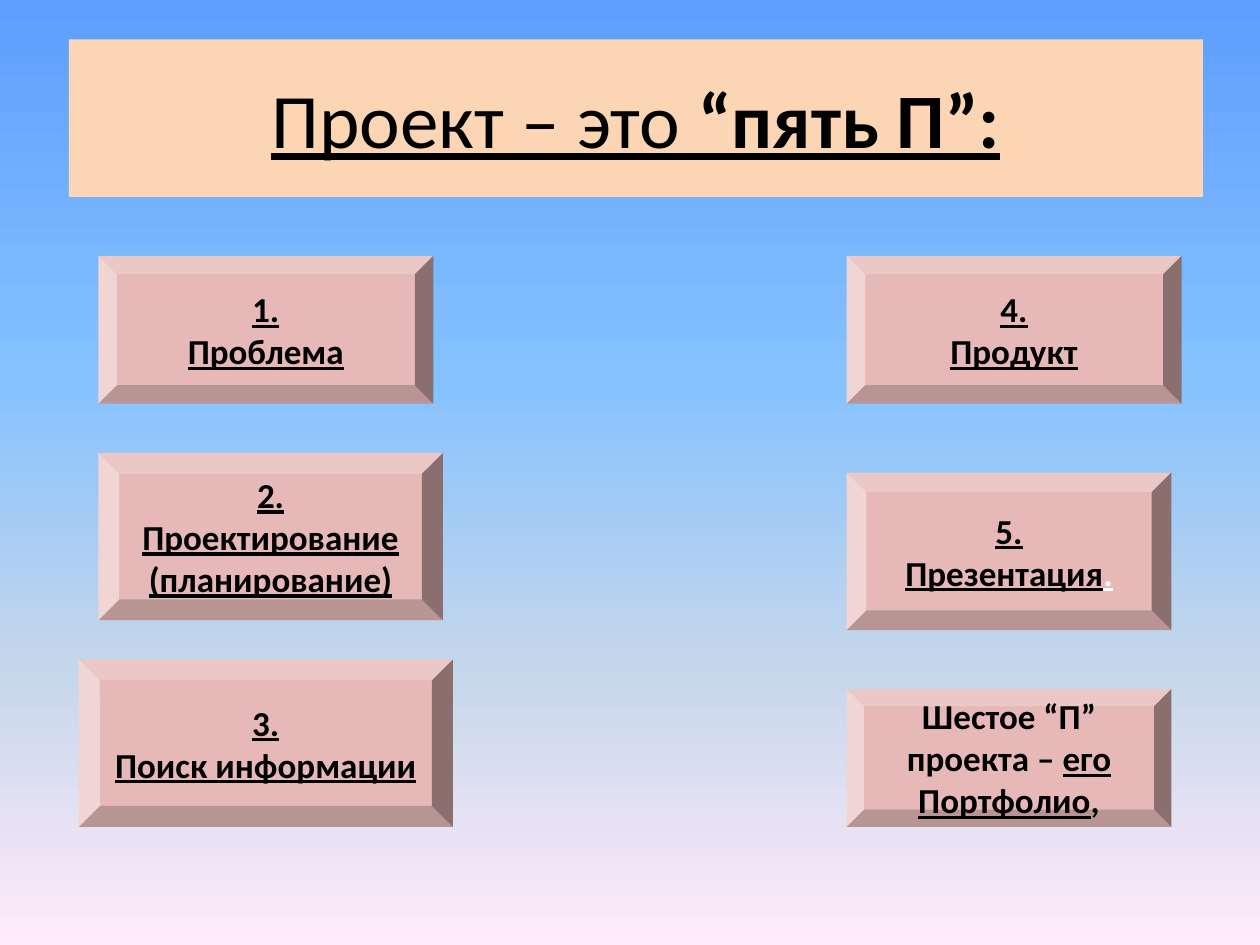
from dataclasses import dataclass

from lxml.etree import SubElement
from pptx import Presentation
from pptx.dml.color import RGBColor
from pptx.enum.shapes import MSO_SHAPE
from pptx.enum.text import MSO_ANCHOR, PP_ALIGN
from pptx.oxml.ns import qn
from pptx.util import Pt


@dataclass(frozen=True)
class Theme:
    font: str = "Calibri"
    title_size: int = 44
    card_size: int = 20
    ink: str = "000000"
    white: str = "FFFFFF"
    banner: str = "FCD5B5"
    card: str = "E6B9B8"
    sky: tuple = ((0, "5E9EFF"), (40, "85C2FF"), (70, "C4D6EB"), (100, "FFEBFA"))


THEME = Theme()


def add_run(p, text, size=THEME.card_size, color=THEME.ink, bold=True, underline=True):
    r = p.add_run()
    r.text = text
    r.font.name = THEME.font
    r.font.size = Pt(size)
    r.font.bold = bold
    r.font.underline = underline
    r.font.color.rgb = RGBColor.from_string(color)


def add_panel(slide, box, kind, fill, paragraphs):
    """Filled shape with centred text; each paragraph is a list of (text, format)."""
    sp = slide.shapes.add_shape(kind, *(Pt(v) for v in box))
    sp.shadow.inherit = False
    sp.fill.solid()
    sp.fill.fore_color.rgb = RGBColor.from_string(fill)
    sp.line.fill.background()
    tf = sp.text_frame
    tf.word_wrap = True
    tf.vertical_anchor = MSO_ANCHOR.MIDDLE
    for i, runs in enumerate(paragraphs):
        p = tf.add_paragraph() if i else tf.paragraphs[0]
        p.alignment = PP_ALIGN.CENTER
        for text, style in runs:
            add_run(p, text, **style)


def paint_background(slide):
    fill = slide.background.fill
    fill.gradient()
    fill.gradient_angle = 270
    stops = next(slide.element.iter(qn("a:gsLst")))
    for old in list(stops):
        stops.remove(old)
    for pos, color in THEME.sky:
        gs = SubElement(stops, qn("a:gs"), pos=str(pos * 1000))
        SubElement(gs, qn("a:srgbClr"), val=color)


def add_title(slide, box):
    size = {"size": THEME.title_size}
    runs = [("Проект – это ", {**size, "bold": False}), ("“пять П”:", size)]
    add_panel(slide, box, MSO_SHAPE.RECTANGLE, THEME.banner, [runs])


def add_card(slide, box, paragraphs):
    add_panel(slide, box, MSO_SHAPE.BEVEL, THEME.card, paragraphs)


def main():
    prs = Presentation()
    prs.slide_width, prs.slide_height = Pt(720), Pt(540)
    s = prs.slides.add_slide(prs.slide_layouts[6])
    paint_background(s)
    add_title(s, (39.4, 22.5, 648, 90))

    # Cards: left column, then right column
    left, right = 56.2, 483.8
    plain = {"underline": False}
    cards = [
        ((left, 146.2, 191.4, 84.4), [[("1.", {})], [("Проблема", {})]]),
        ((left, 258.8, 196.9, 95.6), [[("2. Проектирование (планирование)", {})]]),
        ((45, 376.9, 213.8, 95.6), [[("3.", {})], [("Поиск информации", {})]]),
        ((right, 146.2, 191.4, 84.4), [[("4.", {})], [("Продукт", {})]]),
        ((right, 270, 185.6, 90),
         [[("5.", {})], [("Презентация", {}), (".", {"color": THEME.white})]]),
        ((right, 393.8, 185.6, 78.7),
         [[("Шестое “П” проекта – ", plain), ("его Портфолио", {}), (",", plain)]]),
    ]
    for box, paragraphs in cards:
        add_card(s, box, paragraphs)

    prs.save("out.pptx")


if __name__ == "__main__":
    main()
